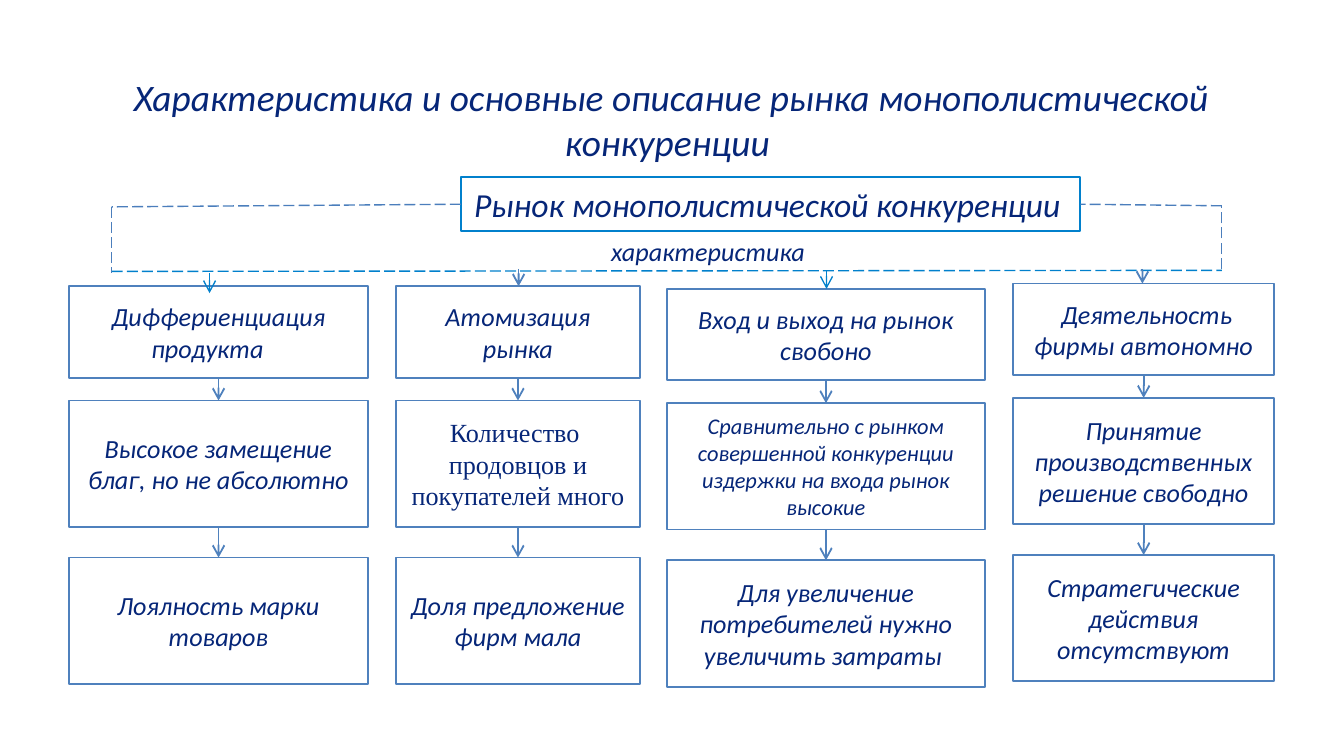
"""Build a slide that charts the traits of a monopolistic competition market."""
from dataclasses import dataclass

import pptx
import pptx.dml.color
import pptx.enum.dml
import pptx.enum.shapes
import pptx.enum.text
import pptx.oxml
import pptx.oxml.ns
import pptx.util

Cm = pptx.util.Cm
Pt = pptx.util.Pt
ALIGN = pptx.enum.text.PP_ALIGN
ANCHOR = pptx.enum.text.MSO_ANCHOR
INK, BLUE, STEEL, CYAN, WHITE = "062678", "4F81BD", "4B7EBC", "0180CC", "FFFFFF"


@dataclass
class Cell:
    text: str
    size: int = 14
    font: str = "Calibri"
    slant: bool = True


@dataclass
class Column:
    left: float
    top: float
    width: float
    lead: "Line"
    cells: list[Cell]


@dataclass
class Line:
    x1: float
    y1: float
    x2: float
    y2: float
    color: str = BLUE
    weight: float = 1
    dash: bool = False
    arrow: bool = True


@dataclass
class Row:
    drop: float
    height: float


def paint(code: str) -> pptx.dml.color.RGBColor:
    return pptx.dml.color.RGBColor.from_string(code)


def write(shape, cell: Cell, align=ALIGN.CENTER, anchor=ANCHOR.MIDDLE, wrap: bool = True) -> None:
    frame = shape.text_frame
    frame.word_wrap = wrap
    frame.vertical_anchor = anchor
    para = frame.paragraphs[0]
    para.text = cell.text
    para.alignment = align
    para.font.name = cell.font
    para.font.size = Pt(cell.size)
    para.font.italic = cell.slant
    para.font.color.rgb = paint(INK)


def label(slide, left: float, top: float, width: float, height: float, cell: Cell, **style):
    box = slide.shapes.add_textbox(Cm(left), Cm(top), Cm(width), Cm(height))
    write(box, cell, **style)
    return box


def block(slide, left: float, top: float, width: float, height: float, cell: Cell) -> None:
    box = slide.shapes.add_shape(
        pptx.enum.shapes.MSO_SHAPE.RECTANGLE, Cm(left), Cm(top), Cm(width), Cm(height))
    box.shadow.inherit = False
    box.fill.solid()
    box.fill.fore_color.rgb = paint(WHITE)
    box.line.color.rgb = paint(BLUE)
    box.line.width = Pt(1)
    write(box, cell)


def draw(slide, line: Line) -> None:
    link = slide.shapes.add_connector(
        pptx.enum.shapes.MSO_CONNECTOR.STRAIGHT,
        Cm(line.x1), Cm(line.y1), Cm(line.x2), Cm(line.y2))
    link.line.color.rgb = paint(line.color)
    link.line.width = Pt(line.weight)
    if line.dash:
        link.line.dash_style = pptx.enum.dml.MSO_LINE.LONG_DASH
    props = link._element.spPr
    if line.arrow:
        tail = pptx.oxml.parse_xml(f'<a:tailEnd {pptx.oxml.ns.nsdecls("a")} type="arrow"/>')
        link.line._get_or_add_ln().append(tail)
    props.append(pptx.oxml.parse_xml(f'<a:effectLst {pptx.oxml.ns.nsdecls("a")}/>'))


ROWS = [Row(0, 1.73), Row(2.16, 2.39), Row(5.13, 2.39)]

COLUMNS = [
    Column(1.3, 5.41, 5.66, Line(3.96, 5.16, 3.96, 5.54, CYAN, 0.75), [
        Cell("Диффериенциация продукта\t"),
        Cell("Высокое замещение благ, но не абсолютно"),
        Cell("Лоялность марки товаров")]),
    Column(7.49, 5.41, 4.6, Line(9.8, 5.08, 9.8, 5.41), [
        Cell("Атомизация рынка"),
        Cell("Количество  продовцов и покупателей много ", font="Times New Roman", slant=False),
        Cell("Доля предложение фирм мала")]),
    Column(12.6, 5.46, 6.02, Line(15.62, 5.13, 15.62, 5.46, CYAN, 0.75), [
        Cell("Вход и выход на рынок свобоно"),
        Cell("Сравнительно с рынком совершенной конкуренции издержки на входа рынок высокие", 12),
        Cell("Для увеличение потребителей нужно увеличить затраты ")]),
    Column(19.15, 5.36, 4.93, Line(21.59, 5.08, 21.59, 5.36), [
        Cell(" Деятельность фирмы автономно"),
        Cell("Принятие производственных решение свободно"),
        Cell("Стратегические действия отсутствуют")]),
]

FRAME = [
    (2.11, 5.13, 23.09, 5.11, CYAN),
    (23.09, 5.08, 23.09, 3.89, STEEL),
    (23.09, 3.89, 20.42, 3.86, STEEL),
    (8.71, 3.86, 2.11, 3.91, STEEL),
    (2.11, 3.91, 2.11, 5.16, STEEL),
]


def main() -> None:
    deck = pptx.Presentation()
    deck.slide_width, deck.slide_height = Cm(25.4), Cm(14.29)
    slide = deck.slides.add_slide(deck.slide_layouts[6])

    label(slide, 1.9, 1.35, 21.59, 1.8,
          Cell("Характеристика и основные описание рынка монополистической конкуренции ", 20))
    head = label(slide, 8.71, 3.35, 11.71, 1.02, Cell("Рынок монополистической конкуренции", 18),
                 align=ALIGN.LEFT, anchor=ANCHOR.TOP, wrap=False)
    head.line.color.rgb = paint(CYAN)
    head.line.width = Pt(1)
    for *ends, color in FRAME:
        draw(slide, Line(*ends, color, 0.75, dash=True, arrow=False))
    label(slide, 11.3, 4.32, 4.22, 0.86, Cell("характеристика"),
          align=ALIGN.LEFT, anchor=ANCHOR.TOP, wrap=False)

    for col in COLUMNS:
        for row, cell in zip(ROWS, col.cells):
            block(slide, col.left, col.top + row.drop, col.width, row.height, cell)
        draw(slide, col.lead)
        mid = col.left + col.width / 2
        for row, below in zip(ROWS, ROWS[1:]):
            draw(slide, Line(mid, col.top + row.drop + row.height, mid, col.top + below.drop))

    deck.save("out.pptx")


if __name__ == "__main__":
    main()
